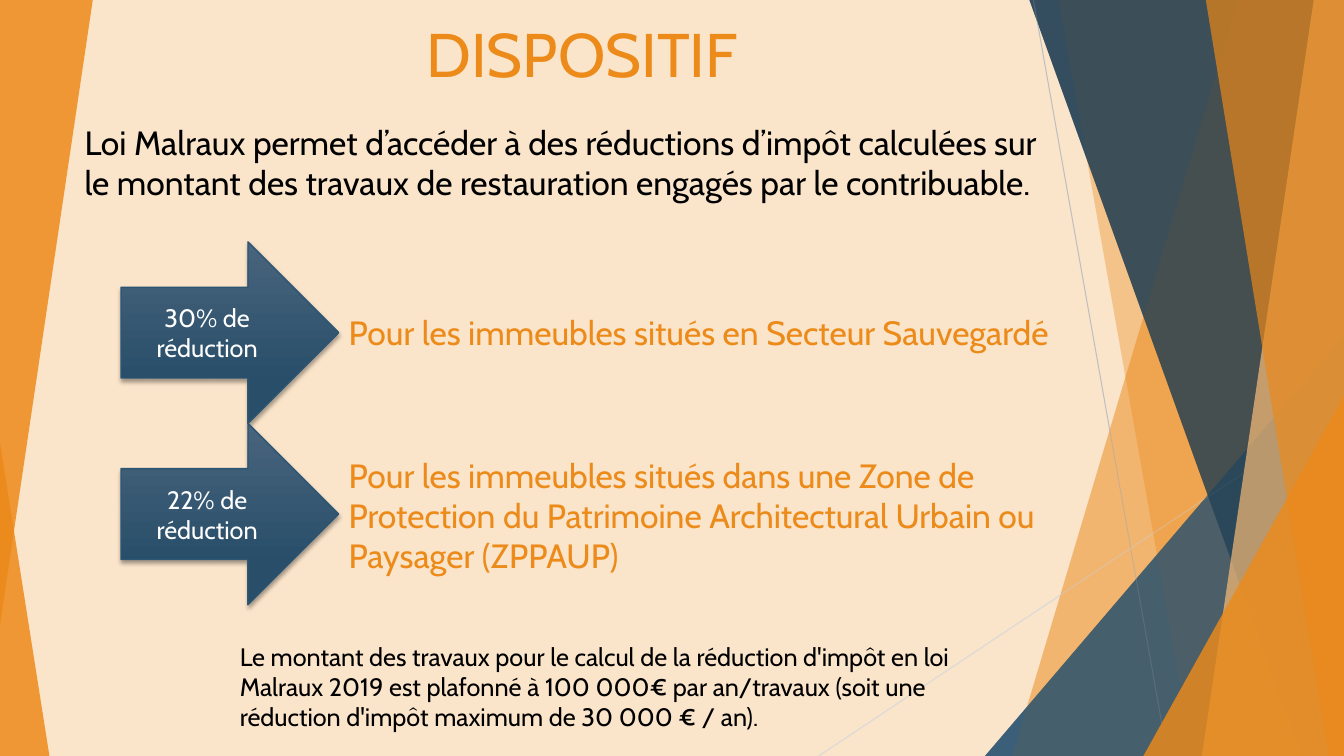
from lxml import etree
from pptx import Presentation
from pptx.dml.color import RGBColor
from pptx.enum.shapes import MSO_CONNECTOR, MSO_SHAPE
from pptx.enum.text import MSO_ANCHOR, MSO_AUTO_SIZE, PP_ALIGN
from pptx.oxml.ns import qn
from pptx.util import Inches, Pt

CREAM = RGBColor(0xFA, 0xE4, 0xCA)
ORANGE = RGBColor(0xEC, 0x8A, 0x1A)
PALE_ORANGE = RGBColor(0xF4, 0xB9, 0x76)
BLUE = RGBColor(0x2C, 0x55, 0x73)
DARK_BLUE = RGBColor(0x21, 0x40, 0x56)
ARROW_TOP = RGBColor(0x49, 0x64, 0x7D)
ARROW_BOTTOM = RGBColor(0x28, 0x4E, 0x69)
GREY = RGBColor(0xBF, 0xBF, 0xBF)
LIGHT_GREY = RGBColor(0xD9, 0xD9, 0xD9)
BLACK = RGBColor(0, 0, 0)
WHITE = RGBColor(0xFF, 0xFF, 0xFF)
SLIDE_WIDTH, SLIDE_HEIGHT = 13.33, 7.5

FACETS = [
    ("band", 1.05, 3.29, ORANGE, 30),
    ("band", 2.83, 1.5, ORANGE, 20),
    ("corner", 3.56, 4.17, BLUE, 72),
    ("band", 3.12, 0.42, DARK_BLUE, 70),
    ("band", 0.3, 1.41, PALE_ORANGE, 70),
    ("band", 1.37, 0.15, ORANGE, 65),
    ("corner", 1.99, 3.57, ORANGE, 80),
]
REDUCTIONS = [
    ("30% de réduction", "Pour les immeubles situés en Secteur Sauvegardé", 0.65, 0.5),
    ("22% de réduction",
     "Pour les immeubles situés dans une Zone de Protection du Patrimoine "
     "Architectural Urbain ou Paysager (ZPPAUP)", 0.26, 1.31),
]


def paint(shape, color, opacity):
    """Give a shape a translucent fill without outline or shadow."""
    shape.shadow.inherit = False
    shape.line.fill.background()
    shape.fill.solid()
    shape.fill.fore_color.rgb = color
    color_element = shape.fill._xPr.find(qn("a:solidFill"))[0]
    etree.SubElement(color_element, qn("a:alpha"), val=str(opacity * 1000))


def add_triangle(slide, box, apex, color, opacity, rotation=0):
    """Add a translucent triangle with its apex at the given share of its width."""
    shape = slide.shapes.add_shape(MSO_SHAPE.ISOSCELES_TRIANGLE, *map(Inches, box))
    shape.adjustments[0] = apex
    shape.rotation = rotation
    paint(shape, color, opacity)


def add_facets(slide, box):
    """Stack the facets against the right edge of the box."""
    left, top, width, height = box
    right, bottom = left + width, top + height
    for kind, first, second, color, opacity in FACETS:
        if kind == "corner":
            corner = (right - first, bottom - second, first, second)
            add_triangle(slide, corner, 1, color, opacity)
            continue
        points = [(right - first, top), (right, top), (right, bottom), (right - second, bottom)]
        start, *others = [(Inches(x), Inches(y)) for x, y in points]
        builder = slide.shapes.build_freeform(*start)
        builder.add_line_segments(others, close=True)
        paint(builder.convert_to_shape(), color, opacity)


def add_thin_line(slide, ends, color):
    """Add a hairline between two points."""
    line = slide.shapes.add_connector(MSO_CONNECTOR.STRAIGHT, *map(Inches, ends))
    line.line.color.rgb = color
    line.line.width = Pt(0.75)
    etree.SubElement(line._element.spPr, qn("a:effectLst"))


def add_backdrop(slide, box):
    """Draw the background, the facets and the side triangles."""
    left, top, width, height = box
    right, bottom = left + width, top + height
    slide.background.fill.solid()
    slide.background.fill.fore_color.rgb = CREAM
    add_facets(slide, box)
    add_triangle(slide, (left, bottom - 3.11, 0.49, 3.11), 0, ORANGE, 85)
    add_thin_line(slide, (right - 3.08, top, right - 1.75, bottom), GREY)
    add_thin_line(slide, (right, bottom - 3.47, right - 5.21, bottom), LIGHT_GREY)
    add_facets(slide, box)
    add_triangle(slide, (left, top, 0.92, 6.2), 1, ORANGE, 85, rotation=180)


def write(shape, text, size, color, **frame_format):
    """Write one paragraph in a shape."""
    alignment = frame_format.pop("alignment", PP_ALIGN.LEFT)
    frame = shape.text_frame
    for name, value in {"word_wrap": True, **frame_format}.items():
        setattr(frame, name, value)
    paragraph = frame.paragraphs[0]
    paragraph.alignment = alignment
    run = paragraph.add_run()
    run.text = text
    for name, value in {"name": "Cabin", "size": Pt(size)}.items():
        setattr(run.font, name, value)
    run.font.color.rgb = color


def add_text(slide, box, text, size, color, **frame_format):
    """Add a text box."""
    write(slide.shapes.add_textbox(*map(Inches, box)), text, size, color, **frame_format)


def add_arrow(slide, box, text):
    """Add a shaded arrow with its label."""
    arrow = slide.shapes.add_shape(MSO_SHAPE.RIGHT_ARROW, *map(Inches, box))
    arrow.fill.gradient()
    arrow.fill.gradient_angle = 270
    stops = [(0, ARROW_TOP), (0.78, ARROW_BOTTOM)]
    for stop, (position, color) in zip(arrow.fill.gradient_stops, stops):
        stop.position = position
        stop.color.rgb = color
    arrow.line.color.rgb = BLUE
    arrow.line.width = Pt(1)
    arrow.shadow.inherit = False
    effects = arrow._element.spPr.find(qn("a:effectLst"))
    shadow = etree.SubElement(effects, qn("a:outerShdw"), blurRad=str(Pt(3)),
                              dist=str(Pt(2)), dir="5400000", rotWithShape="0")
    shade = etree.SubElement(shadow, qn("a:srgbClr"), val=str(BLACK))
    etree.SubElement(shade, qn("a:alpha"), val="35000")
    write(arrow, text, 18, WHITE, alignment=PP_ALIGN.CENTER, vertical_anchor=MSO_ANCHOR.MIDDLE)


def add_reductions(slide, box):
    """Stack the reduction arrows, each beside its description."""
    left, top, width, height = box
    row_height, arrow_width = height / len(REDUCTIONS), 2.16
    for index, (rate, description, offset, text_height) in enumerate(REDUCTIONS):
        row_top = top + index * row_height
        add_arrow(slide, (left, row_top, arrow_width, row_height), rate)
        text_box = (left + arrow_width, row_top + offset, width - arrow_width, text_height)
        add_text(slide, text_box, description, 24, ORANGE,
                 auto_size=MSO_AUTO_SIZE.SHAPE_TO_FIT_TEXT)


def main():
    """Build and save the slide."""
    presentation = Presentation()
    presentation.slide_width = Inches(SLIDE_WIDTH)
    presentation.slide_height = Inches(SLIDE_HEIGHT)
    slide = presentation.slides.add_slide(presentation.slide_layouts[6])
    add_backdrop(slide, (0, 0, SLIDE_WIDTH, SLIDE_HEIGHT))
    add_text(slide, (1.53, 0, 8.49, 0.94), "DISPOSITIF", 44, ORANGE,
             alignment=PP_ALIGN.CENTER, vertical_anchor=MSO_ANCHOR.BOTTOM)
    add_text(slide, (2.28, 6.31, 7.61, 1.1),
             "Le montant des travaux pour le calcul de la réduction d'impôt en loi Malraux 2019 "
             "est plafonné à 100 000€ par an/travaux (soit une réduction d'impôt maximum de "
             "30 000 € / an).", 18, BLACK)
    add_text(slide, (0.74, 1.16, 9.76, 1.31),
             "Loi Malraux permet d’accéder à des réductions d’impôt calculées sur le montant "
             "des travaux de restauration engagés par le contribuable.", 24, BLACK,
             auto_size=MSO_AUTO_SIZE.SHAPE_TO_FIT_TEXT)
    add_reductions(slide, (1.2, 2.4, 9.93, 3.6))
    presentation.save("out.pptx")


if __name__ == "__main__":
    main()
